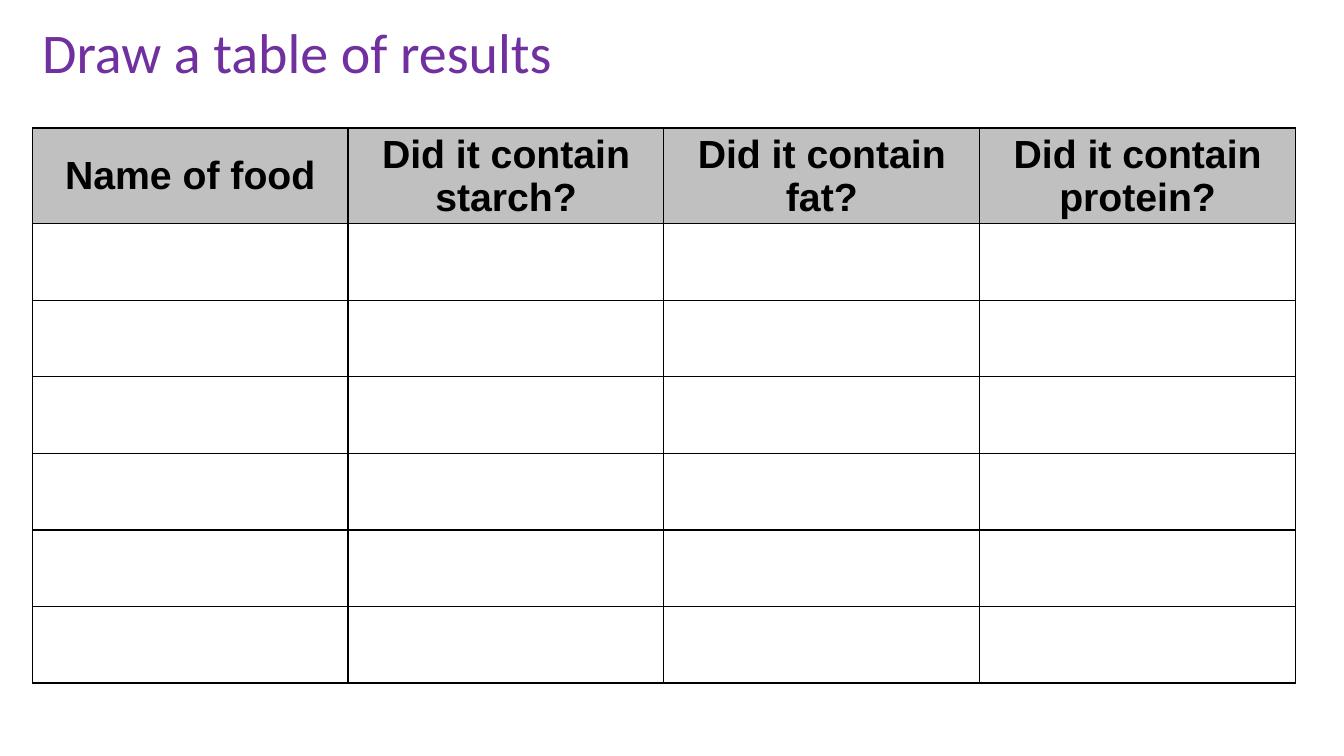
from pptx import Presentation
from pptx.dml.color import RGBColor as Rgb
from pptx.enum.text import MSO_ANCHOR as Anchor, MSO_AUTO_SIZE as Auto, PP_ALIGN as Align
from pptx.oxml import parse_xml
from pptx.oxml.ns import nsdecls
from pptx.util import Inches, Pt


def tint(code):
    return Rgb.from_string(code)


class Board:
    """Holds the style and slide; lengths are percentages of the slide's size."""

    ink, grey, purple = "000000", "C0C0C0", "7030A0"
    edge = 1

    def __init__(self, deck):
        self.wide, self.high = deck.slide_width, deck.slide_height
        self.slide = deck.slides.add_slide(deck.slide_layouts[6])

    def across(self, share):
        return round(self.wide * share / 100)

    def down(self, share):
        return round(self.high * share / 100)

    def frame(self, left, top, width, height):
        return self.across(left), self.down(top), self.across(width), self.down(height)

    def label(self, para, words, size, font, color, bold=False):
        run = para.add_run()
        run.text = words
        run.font.size, run.font.name, run.font.bold = Pt(size), font, bold
        run.font.color.rgb = tint(color)

    def title(self, words, *place):
        text = self.slide.shapes.add_textbox(*self.frame(*place)).text_frame
        text.word_wrap = True
        text.auto_size = Auto.SHAPE_TO_FIT_TEXT
        self.label(text.paragraphs[0], words, 40, "Calibri", self.purple)

    def border(self, cell):
        props = cell._tc.get_or_add_tcPr()
        for side in "LRTB":
            props.append(parse_xml(
                f'<a:ln{side} {nsdecls("a")} w="{Pt(self.edge)}"><a:solidFill>'
                f'<a:srgbClr val="{self.ink}"/></a:solidFill></a:ln{side}>'))

    def head(self, cell, words):
        cell.fill.solid()
        cell.fill.fore_color.rgb = tint(self.grey)
        cell.vertical_anchor = Anchor.MIDDLE
        cell.margin_left = cell.margin_right = cell.margin_top = Inches(0.01)
        cell.margin_bottom = 0
        para = cell.text_frame.paragraphs[0]
        para.alignment = Align.CENTER
        self.label(para, words, 28, "Arial", self.ink, True)

    def table(self, heads, blanks, left, top, width, first, row):
        place = self.frame(left, top, width, first + blanks * row)
        grid = self.slide.shapes.add_table(blanks + 1, len(heads), *place).table
        grid.first_row = grid.horz_banding = False
        for col in grid.columns:
            col.width = self.across(width / len(heads))
        for num, line in enumerate(grid.rows):
            line.height = self.down(row if num else first)
        for cell in grid.iter_cells():
            self.border(cell)
            cell.fill.background()
        for num, words in enumerate(heads):
            self.head(grid.cell(0, num), words)


def main():
    deck = Presentation()
    deck.slide_width, deck.slide_height = Inches(13.33), Inches(7.5)
    board = Board(deck)
    board.title("Draw a table of results", 2.4, 1.6, 94, 10.27)
    foods = ["starch", "fat", "protein"]
    heads = ["Name of food"] + [f"Did it contain {food}?" for food in foods]
    board.table(heads, 6, left=2.4, top=16.93, width=94, first=12.67, row=10.13)
    deck.save("out.pptx")


if __name__ == "__main__":
    main()
